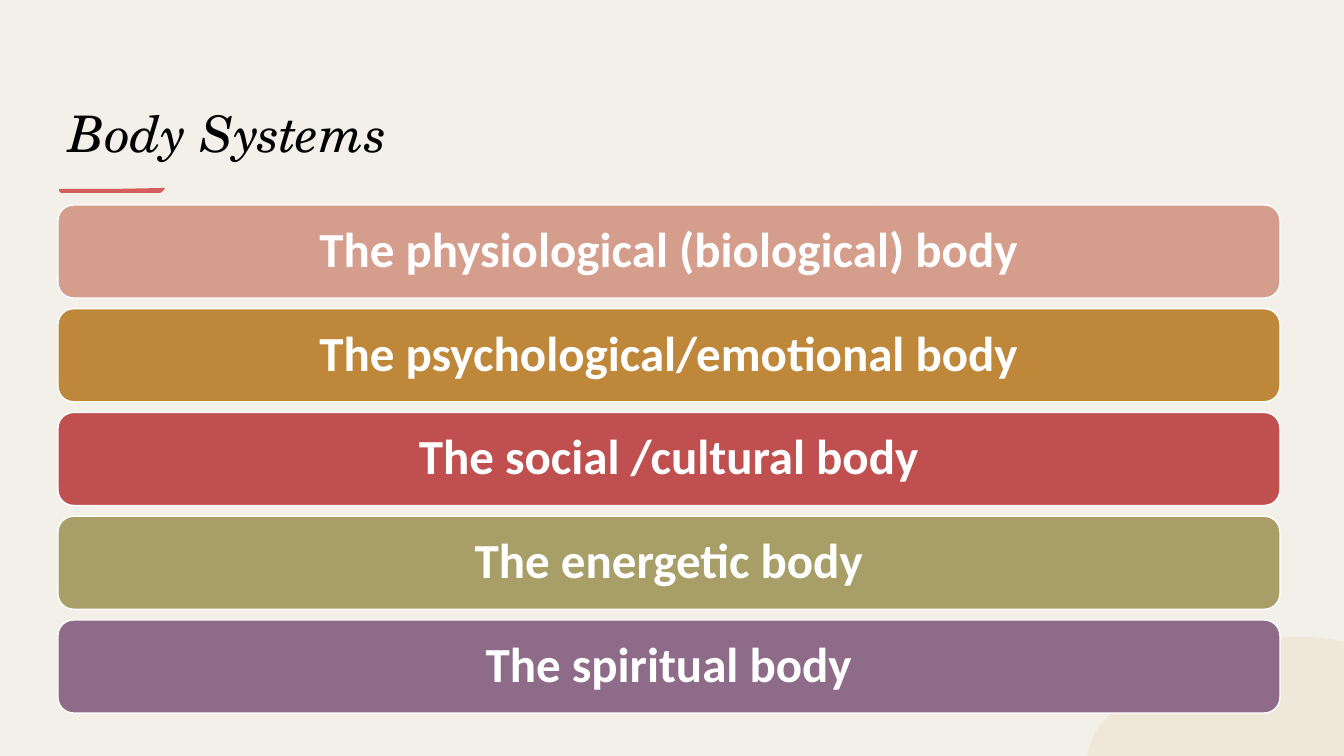
"""Builds the Body Systems slide: a title over five coloured bars."""
from lxml import etree
from pptx import Presentation
from pptx import util as u
from pptx.dml.color import RGBColor
from pptx.enum import shapes, text
from pptx.oxml.ns import qn

TITLE = "Body Systems"
BARS = [
    ("The physiological (biological) body", "D49D8C"),
    ("The psychological/emotional body", "BF873A"),
    ("The social /cultural body", "C05050"),
    ("The energetic body", "A89F68"),
    ("The spiritual body", "8F6B8A"),
]
BAR_LEFT, BAR_WIDTH, BAR_HEIGHT = 58, 1222, 93
FIRST_TOP, LAST_TOP = 205, 620
BRUSH = [(59, 189), (76, 189), (112, 189), (165, 188), (163, 191), (160, 193),
         (133, 193), (108, 193), (61, 193), (59, 191)]
BLOB_START = (1088, 751)
BLOB_CURVES = [
    ((1096, 713), (1142, 689), (1184, 670)),
    ((1220, 653), (1257, 637), (1302, 637)),
    ((1312, 637), (1321, 638), (1331, 639)),
]
BLOB_END = [(1344, 642), (1344, 756), (1088, 756)]
STEPS = 12
PX = 914400 / 100.8


def px(n):
    return u.Emu(round(n * PX))


def rgb(value):
    return RGBColor.from_string(value)


def paint(sp, fill, line=None):
    sp.shadow.inherit = False
    sp.fill.solid()
    sp.fill.fore_color.rgb = rgb(fill)
    if line:
        sp.line.color.rgb = rgb(line)
        sp.line.width = u.Pt(1)
    else:
        sp.line.fill.background()


def write(sp, words, font, size, color, bold=False, italic=False):
    tf = sp.text_frame
    tf.word_wrap = True
    tf.text = words
    p = tf.paragraphs[0]
    f = p.runs[0].font
    f.name, f.size, f.bold, f.italic = font, u.Pt(size), bold, italic
    f.color.rgb = rgb(color)
    return tf, p


def outline(s, points, fill):
    builder = s.shapes.build_freeform(*points[0], scale=PX)
    builder.add_line_segments(points[1:])
    sp = builder.convert_to_shape()
    paint(sp, fill)
    return sp


def bezier(start, curves):
    points = [start]
    for b, c, d in curves:
        a = points[-1]
        for i in range(1, STEPS + 1):
            t = i / STEPS
            weights = (1 - t) ** 3, 3 * t * (1 - t) ** 2, 3 * t * t * (1 - t), t ** 3
            points.append(tuple(sum(w * q[k] for w, q in zip(weights, (a, b, c, d)))
                                for k in (0, 1)))
    return points


def main():
    prs = Presentation()
    prs.slide_width, prs.slide_height = px(1344), px(756)
    s = prs.slides.add_slide(prs.slide_layouts[6])
    s.background.fill.solid()
    s.background.fill.fore_color.rgb = rgb("F3F0E9")

    title = s.shapes.add_textbox(px(59), px(77), px(1109), px(91))
    tf, p = write(title, TITLE, "TeX Gyre Schola", 36, "000000", italic=True)
    tf.vertical_anchor = text.MSO_ANCHOR.BOTTOM

    outline(s, BRUSH, "D45E5E")
    blob = outline(s, bezier(BLOB_START, BLOB_CURVES) + BLOB_END, "E7CFAF")
    color = next(blob.element.spPr.iter(qn("a:srgbClr")))
    etree.SubElement(color, qn("a:alpha")).set("val", "25000")

    pitch = (LAST_TOP - FIRST_TOP) / (len(BARS) - 1)
    for i, (words, fill) in enumerate(BARS):
        bar = s.shapes.add_shape(shapes.MSO_SHAPE.ROUNDED_RECTANGLE, px(BAR_LEFT),
                                 px(FIRST_TOP + i * pitch), px(BAR_WIDTH), px(BAR_HEIGHT))
        paint(bar, fill, "FFFFFF")
        tf, p = write(bar, words, "Calibri", 35, "FFFFFF", bold=True)
        tf.vertical_anchor = text.MSO_ANCHOR.MIDDLE
        p.alignment = text.PP_ALIGN.CENTER
        p.line_spacing = 0.9

    prs.save("out.pptx")


if __name__ == "__main__":
    main()
